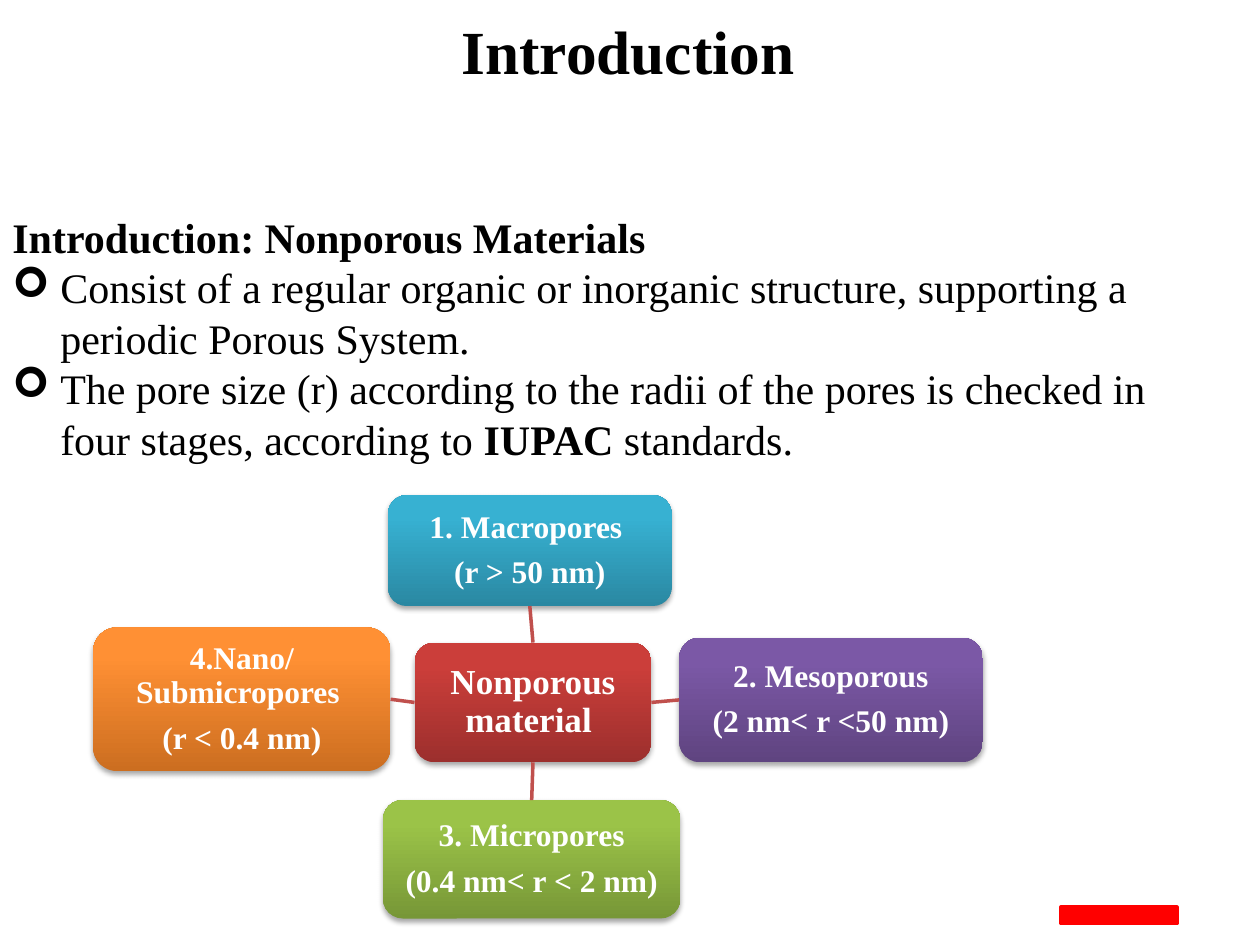
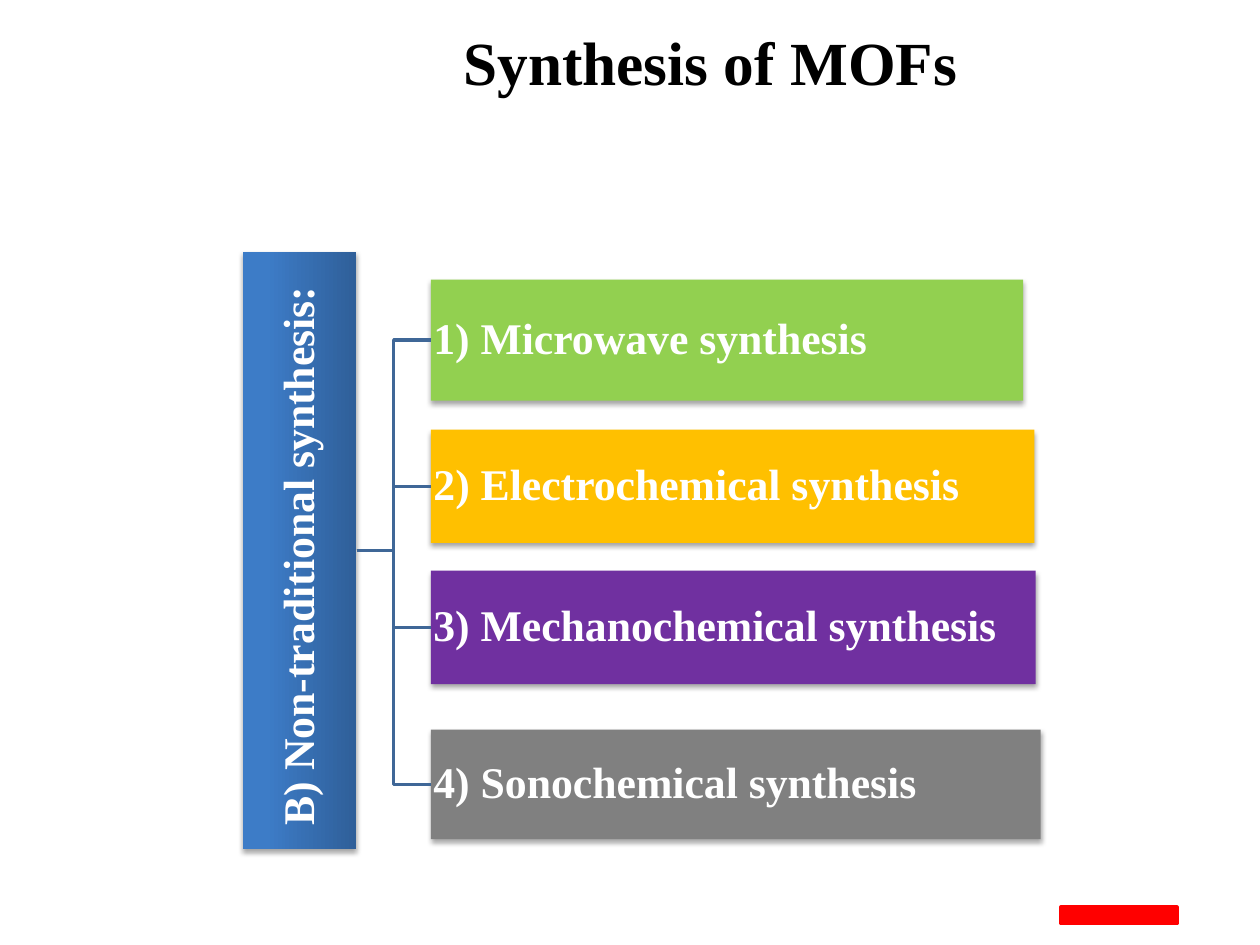
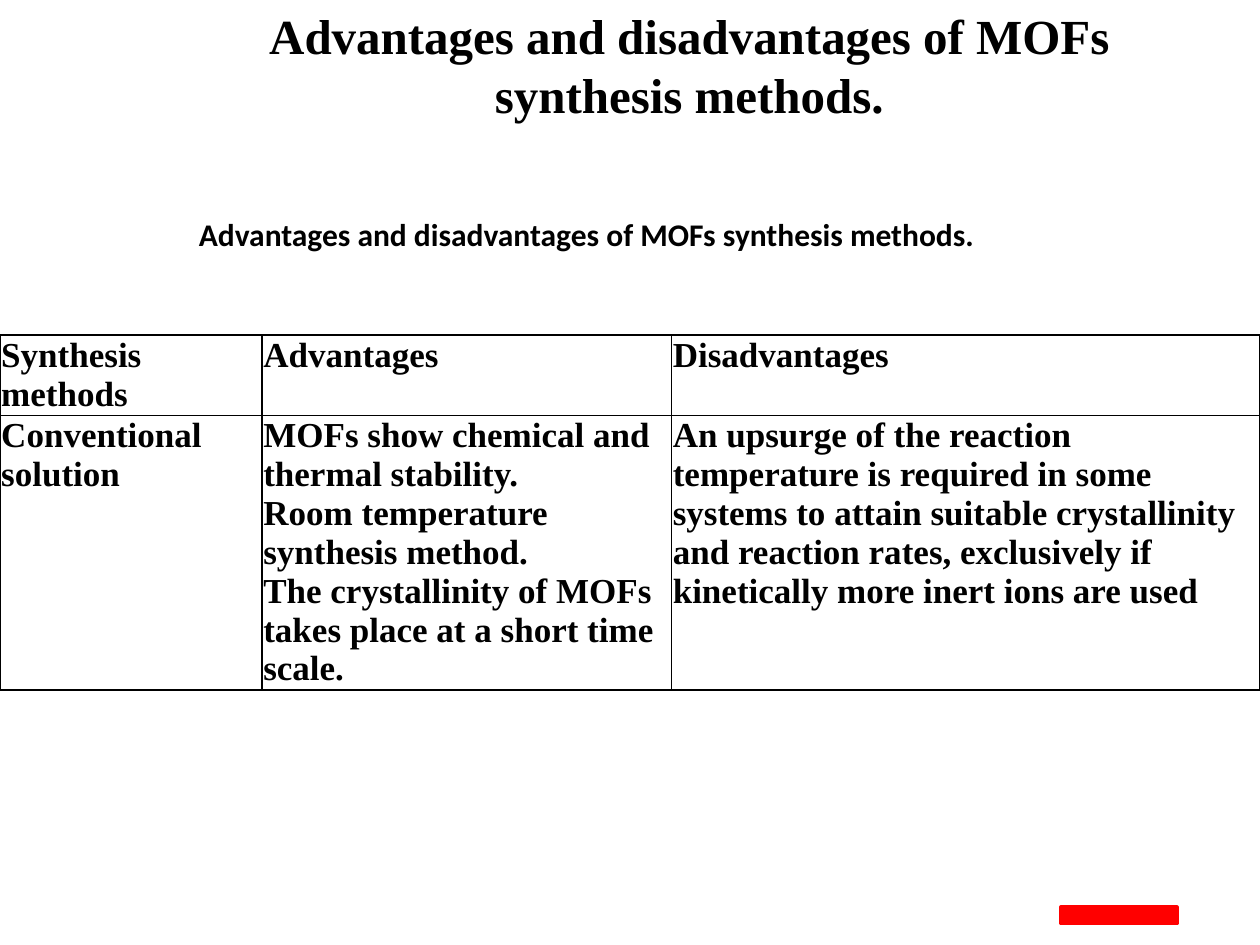
from pptx import Presentation
from pptx.dml.color import RGBColor
from pptx.enum import shapes as sh, text as tx
from pptx.oxml import parse_xml
from pptx.oxml.ns import nsdecls, qn
from pptx.util import Inches, Pt

SERIF, SANS = "Times New Roman", "Calibri"
BLACK = RGBColor(0x00, 0x00, 0x00)
WHITE = RGBColor(0xFF, 0xFF, 0xFF)
RED = RGBColor(0xFF, 0x00, 0x00)
BRICK = RGBColor(0xC0, 0x50, 0x4D)
STEEL = RGBColor(0x3F, 0x67, 0x97)
GREEN = RGBColor(0x92, 0xD0, 0x50)
AMBER = RGBColor(0xFF, 0xC0, 0x00)
VIOLET = RGBColor(0x70, 0x30, 0xA0)
GREY = RGBColor(0x80, 0x80, 0x80)

# Gradients run from a dark to a light colour.
REDS = RGBColor(0x9C, 0x2F, 0x2D), RGBColor(0xCB, 0x3E, 0x3A)
TEALS = RGBColor(0x2A, 0x88, 0xA2), RGBColor(0x37, 0xB1, 0xD2)
PURPLES = RGBColor(0x5F, 0x44, 0x80), RGBColor(0x7B, 0x58, 0xA6)
LIMES = RGBColor(0x77, 0x97, 0x37), RGBColor(0x9B, 0xC3, 0x48)
ORANGES = RGBColor(0xCC, 0x6E, 0x20), RGBColor(0xFF, 0x90, 0x34)
BLUES = RGBColor(0x2F, 0x5F, 0x99), RGBColor(0x3D, 0x7C, 0xC7)

TOP, LEFT, BOTTOM, RIGHT = range(4)
CENTER, START = tx.PP_ALIGN.CENTER, tx.PP_ALIGN.LEFT


def box(at):
    return [Inches(n) for n in at]


def add_run(para, words, size, color=BLACK, bold=True, face=SERIF):
    run = para.add_run()
    run.text = words
    font = run.font
    font.name, font.size, font.bold = face, Pt(size), bold
    font.color.rgb = color


def next_para(frame, index):
    return frame.add_paragraph() if index else frame.paragraphs[0]


def add_slide(deck, title, at, size=35):
    """Add a slide with the shared title style and red footer bar."""
    slide = deck.slides.add_slide(deck.slide_layouts[5])
    head = slide.shapes.title
    head.left, head.top, head.width, head.height = box(at)
    frame = head.text_frame
    frame.auto_size = tx.MSO_AUTO_SIZE.NONE
    frame.vertical_anchor = tx.MSO_ANCHOR.MIDDLE
    frame.paragraphs[0].alignment = CENTER
    add_run(frame.paragraphs[0], title, size)

    bar = slide.shapes.add_shape(sh.MSO_SHAPE.RECTANGLE, *box((8.42, 7.2, 0.92, 0.13)))
    bar.shadow.inherit = False
    bar.fill.solid()
    bar.fill.fore_color.rgb = bar.line.color.rgb = RED
    bar.line.width = Pt(2)
    return slide


def add_frame(slide, at):
    frame = slide.shapes.add_textbox(*box(at)).text_frame
    frame.word_wrap = True
    return frame


def add_bullet(para):
    props = para._p.get_or_add_pPr()
    props.set("marL", str(Inches(0.38)))
    props.set("indent", str(-Inches(0.38)))
    props.append(parse_xml(f'<a:buFont {nsdecls("a")} typeface="Wingdings"/>'))
    props.append(parse_xml(f'<a:buChar {nsdecls("a")} char="➢"/>'))


def add_shade(shape):
    """Give the shape a soft shadow straight below it."""
    shape.shadow.inherit = False
    effects = shape.element.spPr.find(qn("a:effectLst"))
    effects.append(parse_xml(
        f'<a:outerShdw {nsdecls("a")} blurRad="{Pt(3.1)}" dist="{Pt(1.8)}" '
        'dir="5400000" rotWithShape="0"><a:srgbClr val="000000">'
        '<a:alpha val="35000"/></a:srgbClr></a:outerShdw>'))


def add_block(slide, kind, at, lines, size, inset, align=CENTER):
    """Add a shaded shape with white text; its fill is set by the caller."""
    block = slide.shapes.add_shape(kind, *box(at))
    block.line.fill.background()
    add_shade(block)
    frame = block.text_frame
    frame.word_wrap = True
    frame.vertical_anchor = tx.MSO_ANCHOR.MIDDLE
    frame.margin_left = frame.margin_right = Inches(inset)
    frame.margin_top = frame.margin_bottom = Inches(inset)
    for i, line in enumerate(lines):
        para = next_para(frame, i)
        para.alignment, para.line_spacing = align, 0.9
        para.space_after = Pt(size * 0.35)
        add_run(para, line, size, WHITE)
    return block


def fill_blend(shape, colors, angle):
    shape.fill.gradient()
    shape.fill.gradient_angle = angle
    for stop, color, spot in zip(shape.fill.gradient_stops, colors, (0, 0.8)):
        stop.color.rgb, stop.position = color, spot


def add_node(slide, at, lines, colors, size=18):
    node = add_block(slide, sh.MSO_SHAPE.ROUNDED_RECTANGLE, at, lines, size, 0.1)
    fill_blend(node, colors, 90)
    return node


def add_link(slide, kind, start, side, end, into, color):
    link = slide.shapes.add_connector(kind, 0, 0, 0, 0)
    link.begin_connect(start, side)
    link.end_connect(end, into)
    link.line.color.rgb, link.line.width = color, Pt(2)
    link.element.spPr.append(parse_xml(f'<a:effectLst {nsdecls("a")}/>'))


def add_borders(cell):
    props = cell._tc.get_or_add_tcPr()
    for i, tag in enumerate(("lnL", "lnR", "lnT", "lnB")):
        props.insert(i, parse_xml(
            f'<a:{tag} {nsdecls("a")} w="{Pt(1)}"><a:solidFill>'
            f'<a:srgbClr val="{BLACK}"/></a:solidFill></a:{tag}>'))


def add_grid(slide, at, widths, heights, rows):
    grid = slide.shapes.add_table(len(rows), len(widths), *box(at)).table
    grid.first_row = grid.horz_banding = False
    for col, width in zip(grid.columns, widths):
        col.width = Inches(width)
    for row, height, texts in zip(grid.rows, heights, rows):
        row.height = Inches(height)
        for cell, lines in zip(row.cells, texts):
            cell.fill.background()
            add_borders(cell)
            cell.margin_left = cell.margin_right = Inches(0.01)
            cell.margin_top = cell.margin_bottom = Inches(0.01)
            for i, line in enumerate(lines):
                add_run(next_para(cell.text_frame, i), line, 20)


def add_intro(deck):
    slide = add_slide(deck, "Introduction", (2.25, -0.13, 5.47, 1.05))
    frame = add_frame(slide, (0, 1.63, 9.25, 2.52))
    add_run(frame.paragraphs[0], "Introduction: Nonporous Materials", 24)
    points = [
        [("Consist of a regular organic or inorganic structure, "
          "supporting a periodic Porous System.", False)],
        [("The pore size (r) according to the radii of the pores is checked "
          "in four stages, according to ", False),
         ("IUPAC", True), (" standards.", False)],
    ]
    for point in points:
        para = frame.add_paragraph()
        add_bullet(para)
        for words, bold in point:
            add_run(para, words, 24, bold=bold)

    hub = add_node(slide, (3.29, 5.1, 1.88, 0.95), ["Nonporous material "], REDS, 20)
    pores = [
        (BOTTOM, TOP, (3.04, 6.35, 2.36, 0.94),
         ["3. Micropores", "(0.4 nm< r < 2 nm)"], LIMES),
        (RIGHT, LEFT, (5.39, 5.06, 2.41, 0.99),
         ["2. Mesoporous", "(2 nm< r <50 nm)"], PURPLES),
        (TOP, BOTTOM, (3.08, 3.93, 2.25, 0.88),
         ["1. Macropores ", "(r > 50 nm)"], TEALS),
        (LEFT, RIGHT, (0.74, 4.98, 2.36, 1.14),
         ["4.Nano/Submicropores ", "(r < 0.4 nm)"], ORANGES),
    ]
    for side, into, at, lines, colors in pores:
        node = add_node(slide, at, lines, colors)
        add_link(slide, sh.MSO_CONNECTOR.STRAIGHT, hub, side, node, into, BRICK)


def add_methods(deck):
    slide = add_slide(deck, "Synthesis of MOFs", (1.5, 0.14, 8.28, 0.69))
    root = add_block(slide, sh.MSO_SHAPE.RECTANGLE, (1.93, 2, 0.9, 4.74),
                     ["B) Non-traditional synthesis: "], 25, 0.02)
    root.element.txBody.bodyPr.set("vert", "vert270")
    fill_blend(root, BLUES, 180)
    methods = [
        ("1) Microwave synthesis", 2.22, 4.7, 0.96, GREEN),
        ("2) Electrochemical synthesis", 3.41, 4.79, 0.9, AMBER),
        ("3) Mechanochemical synthesis", 4.53, 4.8, 0.9, VIOLET),
        ("4) Sonochemical synthesis", 5.79, 4.84, 0.87, GREY),
    ]
    for name, top, width, height, color in methods:
        leaf = add_block(slide, sh.MSO_SHAPE.RECTANGLE, (3.42, top, width, height),
                         [name], 25, 0.02, START)
        leaf.fill.solid()
        leaf.fill.fore_color.rgb = color
        add_link(slide, sh.MSO_CONNECTOR.ELBOW, root, RIGHT, leaf, LEFT, STEEL)


def add_merits(deck):
    title = "Advantages and disadvantages of MOFs synthesis methods."
    slide = add_slide(deck, title, (1.33, -0.01, 8.28, 1.04), 28)
    rows = [
        [["Synthesis methods"], ["Advantages"], ["Disadvantages"]],
        [["Conventional solution"],
         ["MOFs show chemical and thermal stability.",
          "Room temperature synthesis method.",
          "The crystallinity of MOFs takes place at a short time scale."],
         ["An upsurge of the reaction temperature is required in some systems "
          "to attain suitable crystallinity and reaction rates, exclusively "
          "if kinetically more inert ions are used"]],
    ]
    add_grid(slide, (0, 2.66, 10, 2.8), (2.08, 3.25, 4.67), (0.63, 2.17), rows)
    caption = add_frame(slide, (1.48, 1.66, 7.25, 0.4))
    add_run(caption.paragraphs[0], title, 18, face=SANS)


def main():
    deck = Presentation()
    deck.slide_width, deck.slide_height = Inches(10), Inches(7.5)
    add_intro(deck)
    add_methods(deck)
    add_merits(deck)
    deck.save("out.pptx")


if __name__ == "__main__":
    main()
